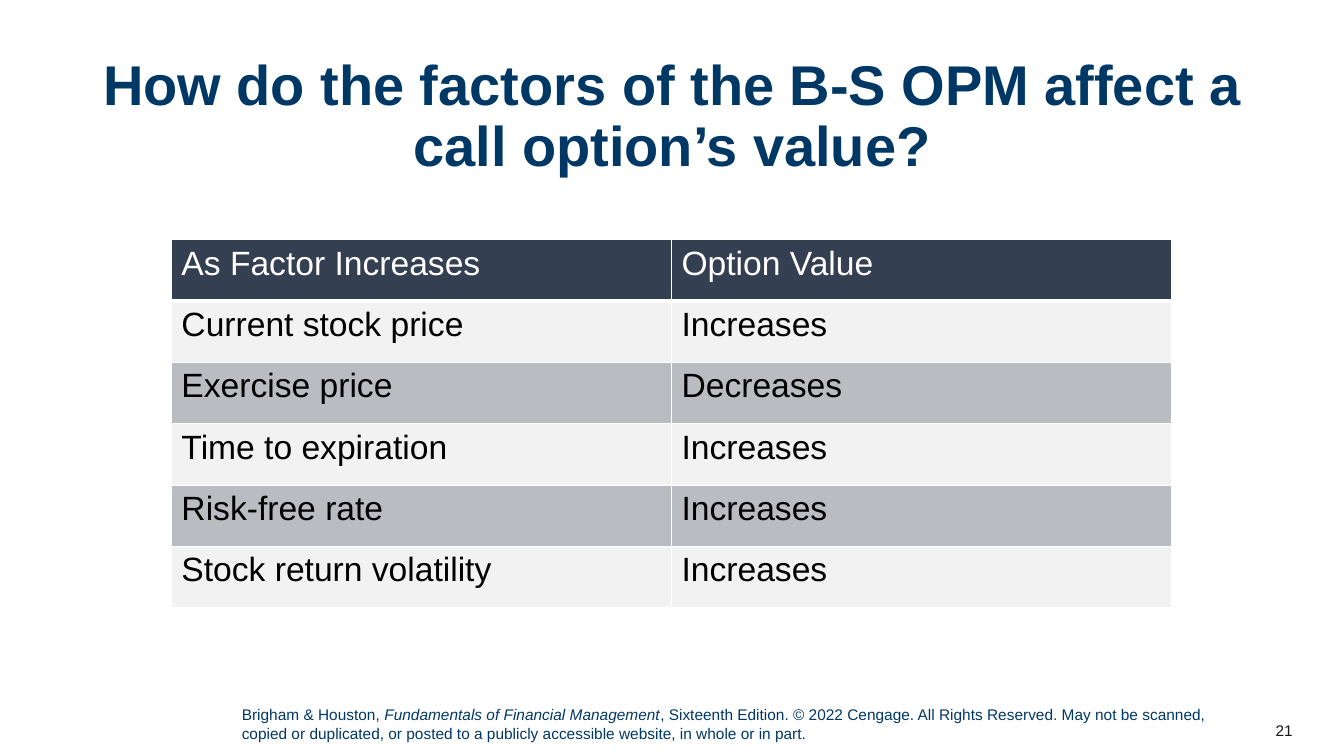
"""Build the slide on how the B-S OPM factors affect a call option's value."""
from lxml import etree
from pptx import Presentation, util as u
from pptx.dml.color import RGBColor
from pptx.enum import text
from pptx.oxml.ns import qn

HUES = {"navy": "003865", "ink": "181717", "head": "343F52", "pale": "F2F2F2",
        "gray": "B9BCC1", "white": "FFFFFF", "black": "000000"}
SIZE = (1333, 750)
TITLE = [("How do the factors of the B-S OPM affect a call option’s value?", False)]
CREDIT = [
    ("Brigham & Houston, ", False),
    ("Fundamentals of Financial Management", True),
    (", Sixteenth Edition. © 2022 Cengage. All Rights Reserved. May not be scanned, "
     "copied or duplicated, or posted to a publicly accessible website, in whole or in part.", False),
]
NUMBER = [("21", False)]
ROWS = [
    ("As Factor Increases", "Option Value"),
    ("Current stock price", "Increases"),
    ("Exercise price", "Decreases"),
    ("Time to expiration", "Increases"),
    ("Risk-free rate", "Increases"),
    ("Stock return volatility", "Increases"),
]
GRID = (170, 238, 992, 365)
ALIGN, ANCHOR = text.PP_ALIGN, text.MSO_ANCHOR
BOXES = [
    (NUMBER, (1212, 705, 80, 40), "ink", {"size": u.Pt(11)},
     {"alignment": ALIGN.RIGHT}, ANCHOR.MIDDLE),
    (CREDIT, (230, 695, 980, 47), "navy", {"size": u.Pt(11)},
     {"alignment": ALIGN.LEFT}, ANCHOR.TOP),
    (TITLE, (52, 52, 1229, 133), "navy", {"size": u.Pt(40), "bold": True},
     {"alignment": ALIGN.CENTER, "line_spacing": 0.9}, ANCHOR.TOP),
]


def px(*spans):
    return [u.Emu(span * 9144) for span in spans]


def apply(item, looks):
    for key, val in looks.items():
        setattr(item, key, val)


def write(para, runs, hue, looks):
    for words, slant in runs:
        run = para.add_run()
        run.text = words
        apply(run.font, {"name": "Arial", "italic": slant, **looks})
        run.font.color.rgb = RGBColor.from_string(HUES[hue])


def add_box(slide, runs, place, hue, looks, form, anchor):
    frame = slide.shapes.add_textbox(*px(*place)).text_frame
    apply(frame, {"word_wrap": True, "vertical_anchor": anchor})
    apply(frame.paragraphs[0], form)
    write(frame.paragraphs[0], runs, hue, looks)


def edge(cell, widths):
    props = cell._tc.get_or_add_tcPr()
    for spot, (side, width) in enumerate(widths.items()):
        line = etree.Element(qn(f"a:ln{side}"), w=str(u.Pt(width)))
        fill = etree.SubElement(line, qn("a:solidFill"))
        etree.SubElement(fill, qn("a:srgbClr"), val=HUES["white"])
        props.insert(spot, line)


def add_grid(slide):
    table = slide.shapes.add_table(len(ROWS), len(ROWS[0]), *px(*GRID)).table
    for row, words in enumerate(ROWS):
        fill = ("gray", "pale")[row % 2] if row else "head"
        for col, word in enumerate(words):
            cell = table.cell(row, col)
            cell.fill.solid()
            cell.fill.fore_color.rgb = RGBColor.from_string(HUES[fill])
            edge(cell, {"L": 1, "R": 1, "T": 3 if row == 1 else 1, "B": 1 if row else 3})
            write(cell.text_frame.paragraphs[0], [(word, False)],
                  "black" if row else "white", {"size": u.Pt(24), "bold": False})


def main():
    deck = Presentation()
    deck.slide_width, deck.slide_height = px(*SIZE)
    slide = deck.slides.add_slide(deck.slide_layouts[6])
    for box in BOXES:
        add_box(slide, *box)
    add_grid(slide)
    deck.save("out.pptx")


if __name__ == "__main__":
    main()
